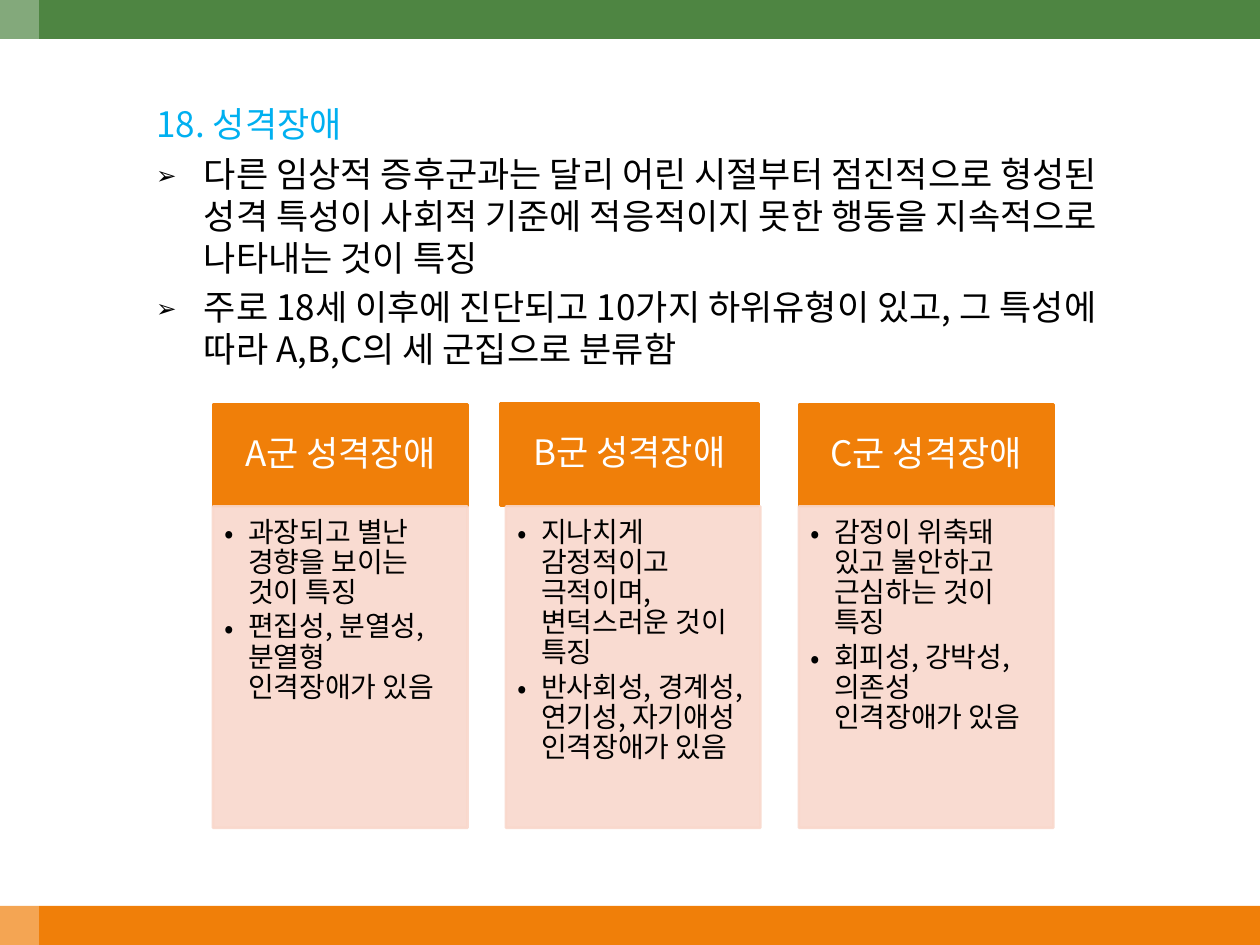
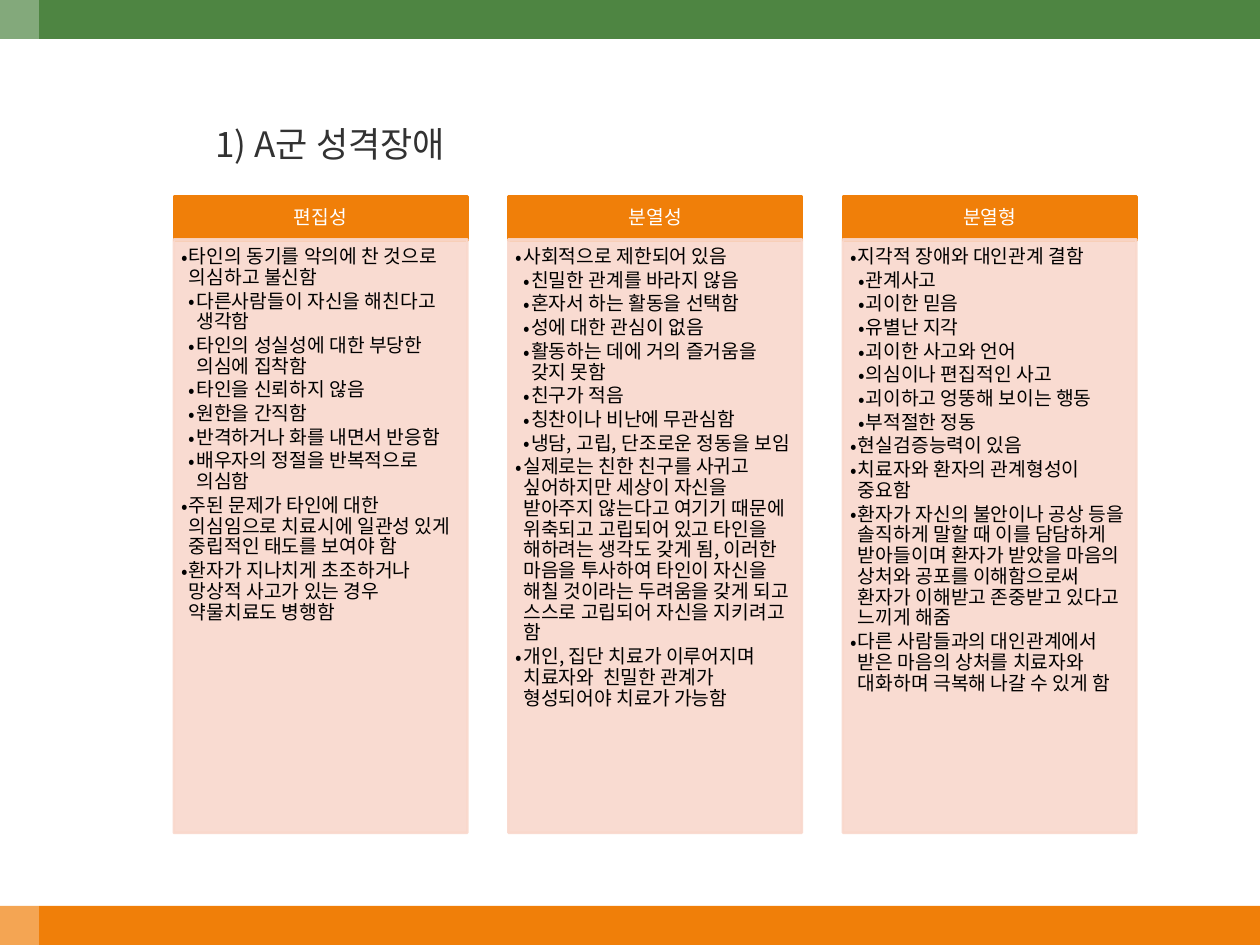
from dataclasses import dataclass
from typing import Optional

import pptx
import pptx.dml.color
import pptx.enum.shapes
import pptx.enum.text
import pptx.oxml.ns
import pptx.oxml.xmlchemy
import pptx.util
from lxml import etree
from pptx.util import Inches

RGB = pptx.dml.color.RGBColor.from_string
ALIGN = pptx.enum.text.PP_ALIGN
ANCHOR = pptx.enum.text.MSO_ANCHOR


@dataclass(frozen=True)
class Theme:
    font: str = "Noto Sans CJK KR"
    green: str = "4E8542"
    orange: str = "F07F09"
    pink: str = "F9D8CC"
    white: str = "FFFFFF"
    black: str = "000000"
    blue: str = "00B0F0"
    dark_gray: str = "323232"
    heading_size: int = 20
    cluster_size: int = 16
    detail_size: int = 11
    outline: float = 1.5


THEME = Theme()


@dataclass(frozen=True)
class Box:
    left: float
    top: float
    width: float
    height: float


@dataclass(frozen=True)
class Item:
    text: str
    depth: int = 1


@dataclass(frozen=True)
class Column:
    heading: str
    items: list[Item]
    heading_box: Optional[Box] = None


@dataclass(frozen=True)
class ColumnStyle:
    first_left: float
    last_left: float
    heading_top: float
    heading_height: float
    body_top: float
    body_height: float
    width: float
    heading_size: int
    body_size: int
    indent: float
    heading_insets: tuple[float, ...]
    body_insets: tuple[float, ...]


CLUSTER_STYLE = ColumnStyle(
    1.69, 6.34, 3.21, 0.81, 4.02, 2.55, 2.02, THEME.heading_size, THEME.cluster_size,
    0.19, (0.16, 0.09, 0.16, 0.09), (0.09, 0.09, 0.12, 0.14))
DETAIL_STYLE = ColumnStyle(
    1.38, 6.69, 1.56, 0.35, 1.9, 4.71, 2.33, THEME.detail_size, THEME.detail_size,
    0.06, (0.09, 0.05, 0.09, 0.05), (0.06, 0.06, 0.09, 0.1))

TRAITS = [
    "다른 임상적 증후군과는 달리 어린 시절부터 점진적으로 형성된 성격 특성이 사회적 기준에 "
    "적응적이지 못한 행동을 지속적으로 나타내는 것이 특징",
    "주로 18세 이후에 진단되고 10가지 하위유형이 있고, 그 특성에 따라 A,B,C의 세 군집으로 분류함",
]

CLUSTERS = [
    Column("A군 성격장애", [
        Item("과장되고 별난 경향을 보이는 것이 특징"),
        Item("편집성, 분열성, 분열형 인격장애가 있음"),
    ]),
    Column("B군 성격장애", [
        Item("지나치게 감정적이고 극적이며, 변덕스러운 것이 특징"),
        Item("반사회성, 경계성, 연기성, 자기애성 인격장애가 있음"),
    ], heading_box=Box(3.97, 3.2, 2.05, 0.81)),
    Column("C군 성격장애", [
        Item("감정이 위축돼 있고 불안하고 근심하는 것이 특징"),
        Item("회피성, 강박성, 의존성 인격장애가 있음"),
    ]),
]

CLUSTER_A_TYPES = [
    Column("편집성", [
        Item("타인의 동기를 악의에 찬 것으로 의심하고 불신함"),
        Item("다른사람들이 자신을 해친다고 생각함", 2),
        Item("타인의 성실성에 대한 부당한 의심에 집착함", 2),
        Item("타인을 신뢰하지 않음", 2),
        Item("원한을 간직함", 2),
        Item("반격하거나 화를 내면서 반응함", 2),
        Item("배우자의 정절을 반복적으로 의심함", 2),
        Item("주된 문제가 타인에 대한 의심임으로 치료시에 일관성 있게 중립적인 태도를 보여야 함"),
        Item("환자가 지나치게 초조하거나 망상적 사고가 있는 경우 약물치료도 병행함"),
    ]),
    Column("분열성", [
        Item("사회적으로 제한되어 있음"),
        Item("친밀한 관계를 바라지 않음", 2),
        Item("혼자서 하는 활동을 선택함", 2),
        Item("성에 대한 관심이 없음", 2),
        Item("활동하는 데에 거의 즐거움을 갖지 못함", 2),
        Item("친구가 적음", 2),
        Item("칭찬이나 비난에 무관심함", 2),
        Item("냉담, 고립, 단조로운 정동을 보임", 2),
        Item("실제로는 친한 친구를 사귀고 싶어하지만 세상이 자신을 받아주지 않는다고 여기기 때문에 "
             "위축되고 고립되어 있고 타인을 해하려는 생각도 갖게 됨, 이러한 마음을 투사하여 타인이 "
             "자신을 해칠 것이라는 두려움을 갖게 되고 스스로 고립되어 자신을 지키려고 함"),
        Item("개인, 집단 치료가 이루어지며 치료자와  친밀한 관계가 형성되어야 치료가 가능함"),
    ]),
    Column("분열형", [
        Item("지각적 장애와 대인관계 결함"),
        Item("관계사고", 2),
        Item("괴이한 믿음", 2),
        Item("유별난 지각", 2),
        Item("괴이한 사고와 언어", 2),
        Item("의심이나 편집적인 사고", 2),
        Item("괴이하고 엉뚱해 보이는 행동", 2),
        Item("부적절한 정동", 2),
        Item("현실검증능력이 있음"),
        Item("치료자와 환자의 관계형성이 중요함"),
        Item("환자가 자신의 불안이나 공상 등을 솔직하게 말할 때 이를 담담하게 받아들이며 환자가 "
             "받았을 마음의 상처와 공포를 이해함으로써 환자가 이해받고 존중받고 있다고 느끼게 해줌"),
        Item("다른 사람들과의 대인관계에서 받은 마음의 상처를 치료자와 대화하며 극복해 나갈 수 있게 함"),
    ]),
]


# Text helpers
def add_element(parent, tag: str, **attributes: str):
    return etree.SubElement(parent, pptx.oxml.ns.qn(tag), attributes)


def write_paragraph(paragraph, text: str, size: int, color: str) -> None:
    paragraph.text = text
    for run in paragraph.runs:
        run.font.size = pptx.util.Pt(size)
        run.font.name = THEME.font
        run.font.color.rgb = RGB(color)
        add_element(run.font._element, "a:ea", typeface=THEME.font)


def set_bullet(paragraph, character: str, margin: float, hanging: float, percent: int = 100) -> None:
    """Call after the paragraph spacing is set, as bullets follow it in the XML."""
    properties = paragraph._p.get_or_add_pPr()
    properties.set("marL", str(Inches(margin)))
    properties.set("indent", str(-Inches(hanging)))
    add_element(properties, "a:buSzPct", val=str(percent * 1000))
    add_element(properties, "a:buFont", typeface=THEME.font)
    add_element(properties, "a:buChar", char=character)


def set_frame(text_frame, insets: tuple[float, ...], anchor=ANCHOR.TOP) -> None:
    text_frame.word_wrap = True
    text_frame.auto_size = pptx.enum.text.MSO_AUTO_SIZE.NONE
    text_frame.vertical_anchor = anchor
    (text_frame.margin_left, text_frame.margin_top,
     text_frame.margin_right, text_frame.margin_bottom) = map(Inches, insets)


def paragraphs_for(text_frame, count: int) -> list:
    return [text_frame.paragraphs[0]] + [text_frame.add_paragraph() for _ in range(count - 1)]


# Shape helpers
def set_opacity(fill_format, percent: int) -> None:
    color = fill_format._xPr.find(".//" + pptx.oxml.ns.qn("a:srgbClr"))
    add_element(color, "a:alpha", val=str(percent * 1000))


def add_rectangle(slide, box: Box, color: str, opacity: int = 100, outlined: bool = False):
    shape = slide.shapes.add_shape(
        pptx.enum.shapes.MSO_SHAPE.RECTANGLE,
        Inches(box.left), Inches(box.top), Inches(box.width), Inches(box.height))
    shape.shadow.inherit = False
    fills = [shape.fill]
    if outlined:
        shape.line.width = pptx.util.Pt(THEME.outline)
        fills.append(shape.line.fill)
    else:
        shape.line.fill.background()
    for fill in fills:
        fill.solid()
        fill.fore_color.rgb = RGB(color)
    if opacity < 100:
        shape_fills = shape._element.spPr.iter(pptx.oxml.ns.qn("a:srgbClr"))
        for element in list(shape_fills):
            add_element(element, "a:alpha", val=str(opacity * 1000))
    return shape


# Shared slide frame: bands and title
def add_framed_slide(presentation, title: str, title_box: Box, title_color: str):
    slide = presentation.slides.add_slide(presentation.slide_layouts[5])
    add_rectangle(slide, Box(0, 7.19, 10, 0.31), THEME.orange)
    add_rectangle(slide, Box(0, 0, 10, 0.31), THEME.green)
    add_rectangle(slide, Box(0, 0, 0.31, 7.5), THEME.white, opacity=30)

    placeholder = slide.shapes.title
    placeholder.left, placeholder.top = Inches(title_box.left), Inches(title_box.top)
    placeholder.width, placeholder.height = Inches(title_box.width), Inches(title_box.height)
    set_frame(placeholder.text_frame, (0.1, 0.05, 0.1, 0.05))
    paragraph = placeholder.text_frame.paragraphs[0]
    write_paragraph(paragraph, title, THEME.heading_size, title_color)
    paragraph.alignment = ALIGN.LEFT
    return slide


# Columns: orange heading above a pink bullet list
def add_column(slide, column: Column, left: float, style: ColumnStyle) -> None:
    heading_box = column.heading_box or Box(left, style.heading_top, style.width, style.heading_height)
    heading = add_rectangle(slide, heading_box, THEME.orange, outlined=True)
    set_frame(heading.text_frame, style.heading_insets, ANCHOR.MIDDLE)
    paragraph = heading.text_frame.paragraphs[0]
    write_paragraph(paragraph, column.heading, style.heading_size, THEME.white)
    paragraph.alignment = ALIGN.CENTER
    paragraph.line_spacing = 0.9

    body_box = Box(left, style.body_top, style.width, style.body_height)
    body = add_rectangle(slide, body_box, THEME.pink, opacity=90, outlined=True)
    set_frame(body.text_frame, style.body_insets)
    for paragraph, item in zip(paragraphs_for(body.text_frame, len(column.items)), column.items):
        write_paragraph(paragraph, item.text, style.body_size, THEME.black)
        paragraph.alignment = ALIGN.LEFT
        paragraph.level = item.depth
        paragraph.line_spacing = 0.9
        paragraph.space_after = pptx.util.Pt(round(0.15 * style.body_size, 2))
        set_bullet(paragraph, "•", style.indent * item.depth, style.indent)


def add_columns(slide, columns: list[Column], style: ColumnStyle) -> None:
    step = (style.last_left - style.first_left) / (len(columns) - 1)
    for index, column in enumerate(columns):
        add_column(slide, column, style.first_left + index * step, style)


# Slides
def add_overview_slide(presentation) -> None:
    slide = add_framed_slide(presentation, "18. 성격장애", Box(1.14, 0.76, 7.8, 0.4), THEME.blue)
    traits_box = slide.shapes.add_textbox(Inches(1.14), Inches(1.16), Inches(7.8), Inches(1.85))
    set_frame(traits_box.text_frame, (0.1, 0.05, 0.1, 0.05))
    for index, paragraph in enumerate(paragraphs_for(traits_box.text_frame, len(TRAITS))):
        write_paragraph(paragraph, TRAITS[index], THEME.heading_size, THEME.black)
        paragraph.space_before = pptx.util.Pt(4 if index else 0)
        set_bullet(paragraph, "➢", 0.38, 0.38, percent=70)
    add_columns(slide, CLUSTERS, CLUSTER_STYLE)


def add_cluster_a_slide(presentation) -> None:
    slide = add_framed_slide(presentation, "1) A군 성격장애", Box(1.61, 0.92, 6.78, 0.5), THEME.dark_gray)
    add_columns(slide, CLUSTER_A_TYPES, DETAIL_STYLE)


def main() -> None:
    presentation = pptx.Presentation()
    presentation.slide_width, presentation.slide_height = Inches(10), Inches(7.5)
    add_overview_slide(presentation)
    add_cluster_a_slide(presentation)
    presentation.save("out.pptx")


if __name__ == "__main__":
    main()
